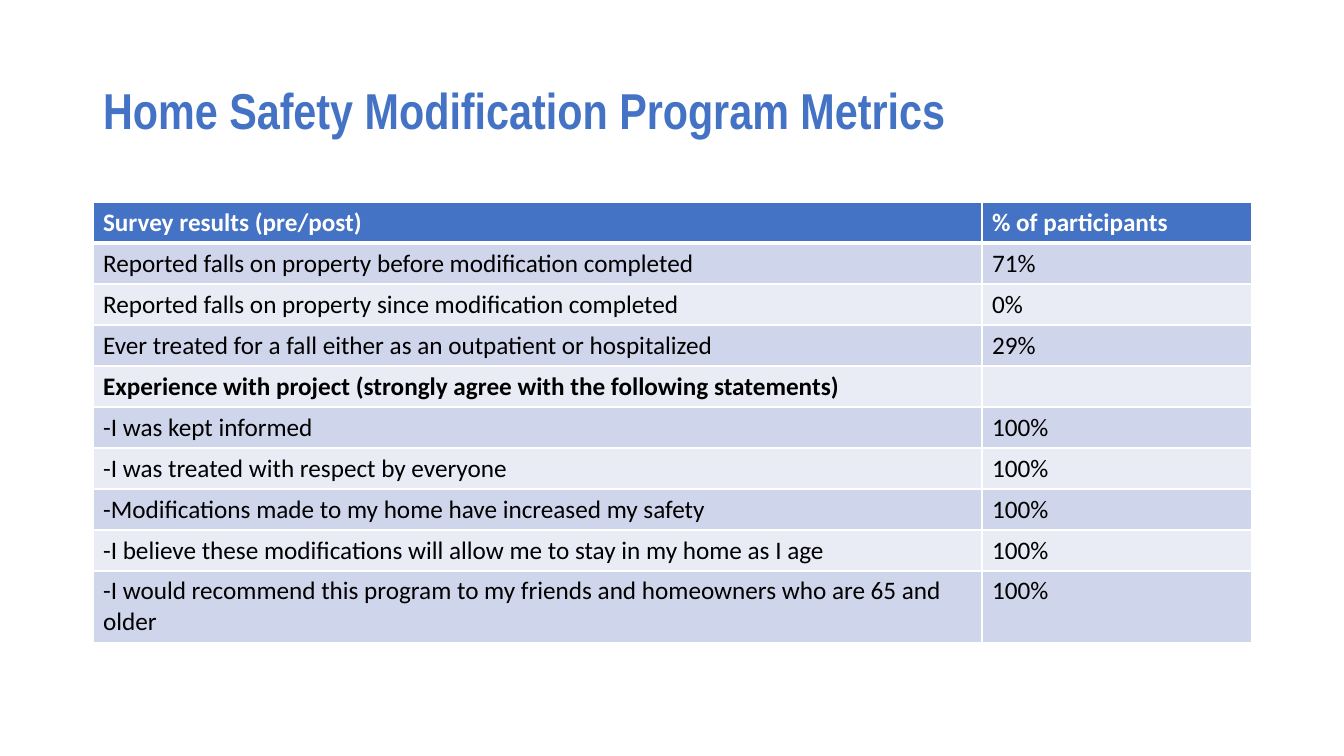
"""Build the home safety survey results slide."""
from lxml import etree
from pptx import Presentation
from pptx.dml.color import RGBColor
from pptx.enum.text import MSO_ANCHOR, MSO_AUTO_SIZE, PP_ALIGN
from pptx.oxml.ns import qn
from pptx.util import Emu, Pt

LEFT, MIDDLE, FIXED = PP_ALIGN.LEFT, MSO_ANCHOR.MIDDLE, MSO_AUTO_SIZE.NONE
BLUE, WHITE, BLACK = "4472C4", "FFFFFF", "000000"
BANDS = ("CFD5EA", "E9EBF5")

TITLE = "Home Safety Modification Program Metrics"
ROWS = [
    ("Survey results (pre/post)", "% of participants"),
    ("Reported falls on property before modification completed", "71%"),
    ("Reported falls on property since modification completed", "0%"),
    ("Ever treated for a fall either as an outpatient or hospitalized", "29%"),
    ("Experience with project (strongly agree with the following statements)", ""),
    ("-I was kept informed", "100%"),
    ("-I was treated with respect by everyone", "100%"),
    ("-Modifications made to my home have increased my safety", "100%"),
    ("-I believe these modifications will allow me to stay in my home as I age", "100%"),
    ("-I would recommend this program to my friends and homeowners who are 65 and older", "100%"),
]
SLIDE = (1344, 756)
TITLE_BOX = (93, 40, 1159, 146)
TABLE_AT = (93, 202)
COLS = (889, 270)
ROW_H = 41
SCALE = 914400 / 100.8


def px(n):
    """Turn px into EMU."""
    return Emu(round(n * SCALE))


def color(code):
    """Turn a hex string into a colour."""
    return RGBColor.from_string(code)


def add_run(frame, text, font, size, code, bold):
    """Add one formatted run to the first paragraph of a frame."""
    run = frame.paragraphs[0].add_run()
    run.text = text
    run.font.name, run.font.size, run.font.bold = font, Pt(size), bold
    run.font.color.rgb = color(code)


def add_edge(cell, side, width):
    """Draw one white border of a cell."""
    props = cell._tc.get_or_add_tcPr()
    line = etree.SubElement(props, qn("a:" + side), w=str(Pt(width)))
    fill = etree.SubElement(line, qn("a:solidFill"))
    etree.SubElement(fill, qn("a:srgbClr"), val=WHITE)


def add_title(slide):
    """Place and format the title."""
    title = slide.shapes.title
    title.left, title.top, title.width, title.height = map(px, TITLE_BOX)
    frame = title.text_frame
    frame.word_wrap, frame.auto_size = True, FIXED
    frame.vertical_anchor = MIDDLE
    para = frame.paragraphs[0]
    para.alignment, para.line_spacing = LEFT, 0.9
    add_run(frame, TITLE, "Arial Narrow", 36, BLUE, True)


def add_results(slide):
    """Add the survey table with banded rows."""
    size = (sum(COLS), ROW_H * len(ROWS))
    box = map(px, TABLE_AT + size)
    table = slide.shapes.add_table(len(ROWS), len(COLS), *box).table
    for col, width in zip(table.columns, COLS):
        col.width = px(width)
    for r, texts in enumerate(ROWS):
        table.rows[r].height = px(ROW_H)
        head = r == 0
        bold = head or not texts[1]
        for c, text in enumerate(texts):
            cell = table.cell(r, c)
            for side in ("lnL", "lnR", "lnT", "lnB"):
                thick = (r, side) in ((0, "lnB"), (1, "lnT"))
                add_edge(cell, side, 3 if thick else 1)
            cell.fill.solid()
            cell.fill.fore_color.rgb = color(BLUE if head else BANDS[(r - 1) % 2])
            if text:
                add_run(cell.text_frame, text, "Calibri", 18, WHITE if head else BLACK, bold)


def main():
    """Build and save the slide."""
    deck = Presentation()
    deck.slide_width, deck.slide_height = map(px, SLIDE)
    slide = deck.slides.add_slide(deck.slide_layouts[5])
    add_title(slide)
    add_results(slide)
    deck.save("out.pptx")


if __name__ == "__main__":
    main()
